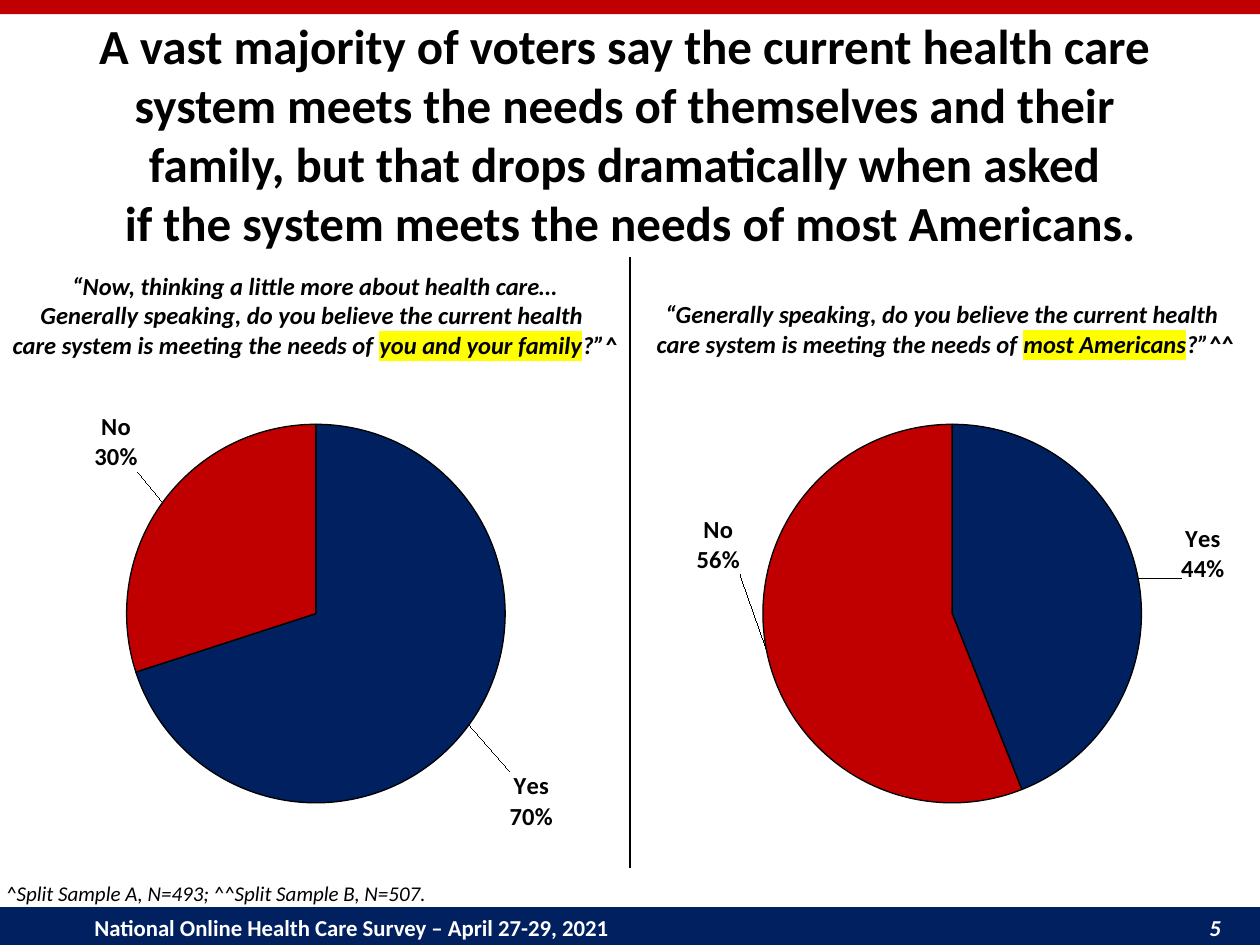
from dataclasses import dataclass

from lxml.etree import SubElement
from pptx import Presentation
from pptx.chart.data import CategoryChartData
from pptx.dml.color import RGBColor
from pptx.enum.chart import XL_CHART_TYPE as ChartType
from pptx.enum.shapes import MSO_CONNECTOR as Connector, MSO_SHAPE as Preset
from pptx.enum.text import MSO_ANCHOR as Anchor, PP_ALIGN as Align
from pptx.oxml import parse_xml
from pptx.oxml.ns import nsdecls, qn
from pptx.util import Inches, Pt

NAVY = RGBColor(0x00, 0x20, 0x60)
RED = RGBColor(0xC0, 0x00, 0x00)
BLACK = RGBColor(0x00, 0x00, 0x00)
WHITE = RGBColor(0xFF, 0xFF, 0xFF)
YELLOW = RGBColor(0xFF, 0xFF, 0x00)
FACE = "Calibri"
WIDTH, HEIGHT = Inches(10), Inches(7.5)
COLUMN = WIDTH // 2
PLOT = {"x": 0.201, "y": 0.165, "w": 0.601, "h": 0.585}
ANSWERS = {"Yes": NAVY, "No": RED}


@dataclass(frozen=True)
class Span:
    text: str
    marked: bool = False


@dataclass(frozen=True)
class Style:
    size: int
    bold: bool = False
    italic: bool = False
    align: Align = Align.LEFT
    color: RGBColor = BLACK


@dataclass(frozen=True)
class Box:
    left: float
    top: float
    width: float
    height: float

    def emu(self) -> tuple[int, int, int, int]:
        return (int(self.left * WIDTH), int(self.top * HEIGHT),
                int(self.width * WIDTH), int(self.height * HEIGHT))


@dataclass(frozen=True)
class Question:
    column: float
    top: float
    height: float
    lines: tuple[tuple[Span, ...], ...]
    shares: tuple[float, float]
    label_shifts: tuple[tuple[float, float], ...]


TITLE = Style(28, bold=True, align=Align.CENTER)
ASKED = Style(14, bold=True, italic=True, align=Align.CENTER)
NOTE = Style(12, italic=True)
FOOTER = Style(13, bold=True, color=WHITE)

TITLE_LINES = (
    "A vast majority of voters say the current health care ",
    "system meets the needs of themselves and their ",
    "family, but that drops dramatically when asked ",
    "if the system meets the needs of most Americans.",
)
BELIEF = (Span("Generally speaking, do you believe the current health "),)
NEEDS = Span("care system is meeting the needs of ")
QUESTIONS = (
    Question(0, 0.28, 0.14,
             ((Span("“Now, thinking a little more about health care…"),), BELIEF,
              (NEEDS, Span("you and your family", True), Span("?”^"))),
             (0.7, 0.3), ((0.055, 0.065), (-0.03, -0.04))),
    Question(1, 0.31, 0.08,
             ((Span("“" + BELIEF[0].text),),
              (NEEDS, Span("most Americans", True), Span("?”^^"))),
             (0.44, 0.56), ((0.057, 0.012), (-0.03, -0.21))),
)


def apply_style(font, style: Style) -> None:
    font.name, font.size = FACE, Pt(style.size)
    font.bold, font.italic = style.bold, style.italic
    font.color.rgb = style.color


def add_text(slide, box: Box, lines, style: Style, inset: float = 0.1) -> None:
    frame = slide.shapes.add_textbox(*box.emu()).text_frame
    frame.word_wrap = True
    frame.margin_left = frame.margin_right = Inches(inset)
    for number, spans in enumerate(lines):
        paragraph = frame.add_paragraph() if number else frame.paragraphs[0]
        paragraph.alignment = style.align
        apply_style(paragraph.font, style)
        for span in spans:
            run = paragraph.add_run()
            run.text = span.text
            if span.marked:
                highlight = SubElement(run._r.get_or_add_rPr(), qn("a:highlight"))
                SubElement(highlight, qn("a:srgbClr")).set("val", str(YELLOW))


def add_bar(slide, box: Box, color: RGBColor):
    bar = slide.shapes.add_shape(Preset.RECTANGLE, *box.emu())
    bar.shadow.inherit = False
    bar.fill.solid()
    bar.fill.fore_color.rgb = color
    bar.line.fill.background()
    return bar


def add_footer(slide) -> None:
    frame = add_bar(slide, Box(0, 0.96, 1, 0.043), NAVY).text_frame
    frame.vertical_anchor = Anchor.MIDDLE
    frame.margin_left = Inches(0.75)
    frame.margin_top = frame.margin_bottom = 0
    paragraph = frame.paragraphs[0]
    paragraph.alignment = Align.LEFT
    tabs = SubElement(paragraph._p.get_or_add_pPr(), qn("a:tabLst"))
    tab = SubElement(tabs, qn("a:tab"))
    tab.set("pos", str(Inches(8.94)))
    tab.set("algn", "r")
    apply_style(paragraph.font, FOOTER)
    survey, page = paragraph.add_run(), paragraph.add_run()
    survey.text = "National Online Health Care Survey – April 27-29, 2021\t"
    page.text = "5"
    page.font.italic = True
    for run in (survey, page):
        run.font.color.rgb = WHITE


def manual_layout(tags: str):
    return parse_xml(f'<c:layout {nsdecls("c")}><c:manualLayout>{tags}'
                     '</c:manualLayout></c:layout>')


def label_content() -> str:
    flags = {"LegendKey": 0, "Val": 1, "CatName": 1, "SerName": 0,
             "Percent": 0, "BubbleSize": 0}
    shown = "".join(f'<c:show{flag} val="{on}"/>' for flag, on in flags.items())
    return ('<c:numFmt formatCode="0%" sourceLinked="0"/>'
            '<c:spPr><a:noFill/><a:ln><a:noFill/></a:ln></c:spPr>'
            '<c:txPr><a:bodyPr/><a:p><a:pPr><a:defRPr sz="1400" b="1">'
            f'<a:solidFill><a:srgbClr val="{BLACK}"/></a:solidFill>'
            f'<a:latin typeface="{FACE}"/></a:defRPr></a:pPr></a:p></c:txPr>'
            f'<c:dLblPos val="outEnd"/>{shown}<c:separator>\n</c:separator>')


def add_labels(series, shifts) -> None:
    content = label_content()
    points = "".join(
        f'<c:dLbl><c:idx val="{index}"/><c:layout><c:manualLayout>'
        f'<c:x val="{x}"/><c:y val="{y}"/></c:manualLayout></c:layout>'
        f'{content}</c:dLbl>' for index, (x, y) in enumerate(shifts))
    labels = parse_xml(f'<c:dLbls {nsdecls("c", "a")}>{points}{content}'
                       '<c:showLeaderLines val="1"/></c:dLbls>')
    series._element.find(qn("c:cat")).addprevious(labels)


def add_pie(slide, question: Question) -> None:
    data = CategoryChartData(number_format="0%")
    data.categories = list(ANSWERS)
    data.add_series("Series 1", question.shares)
    box = Box(question.column * 0.505, 0.336, 0.5, 0.685)
    chart = slide.shapes.add_chart(ChartType.PIE, *box.emu(), data).chart
    chart.has_legend = chart.has_title = False
    apply_style(chart.font, Style(14, bold=True))
    chart.plots[0].vary_by_categories = True
    series = chart.plots[0].series[0]
    for index, color in enumerate(ANSWERS.values()):
        slice_format = series.points[index].format
        slice_format.fill.solid()
        slice_format.fill.fore_color.rgb = color
        slice_format.line.color.rgb = BLACK
        slice_format.line.width = Pt(0.75)
    add_labels(series, question.label_shifts)
    area = chart._chartSpace.chart.plotArea
    for layout in area.findall(qn("c:layout")):
        area.remove(layout)
    area.insert(0, manual_layout(
        '<c:layoutTarget val="inner"/><c:xMode val="edge"/><c:yMode val="edge"/>'
        + "".join(f'<c:{side} val="{share}"/>' for side, share in PLOT.items())))


def main() -> None:
    deck = Presentation()
    deck.slide_width, deck.slide_height = WIDTH, HEIGHT
    slide = deck.slides.add_slide(deck.slide_layouts[6])
    add_bar(slide, Box(0, 0, 1, 0.015), RED)
    add_footer(slide)
    add_text(slide, Box(0, 0.01, 1, 0.265), [(Span(line),) for line in TITLE_LINES], TITLE)
    divider = slide.shapes.add_connector(
        Connector.STRAIGHT, COLUMN, int(0.272 * HEIGHT), COLUMN, int(0.919 * HEIGHT))
    divider.line.color.rgb = BLACK
    divider.line.width = Pt(0.75)
    SubElement(divider._element.spPr, qn("a:effectLst"))
    for question in QUESTIONS:
        add_pie(slide, question)
        add_text(slide, Box(question.column / 2, question.top, 0.5, question.height),
                 question.lines, ASKED, inset=0.05)
    add_text(slide, Box(-0.005, 0.925, 0.445, 0.04),
             [(Span("^Split Sample A, N=493; ^^Split Sample B, N=507."),)], NOTE)
    deck.save("out.pptx")


if __name__ == "__main__":
    main()
